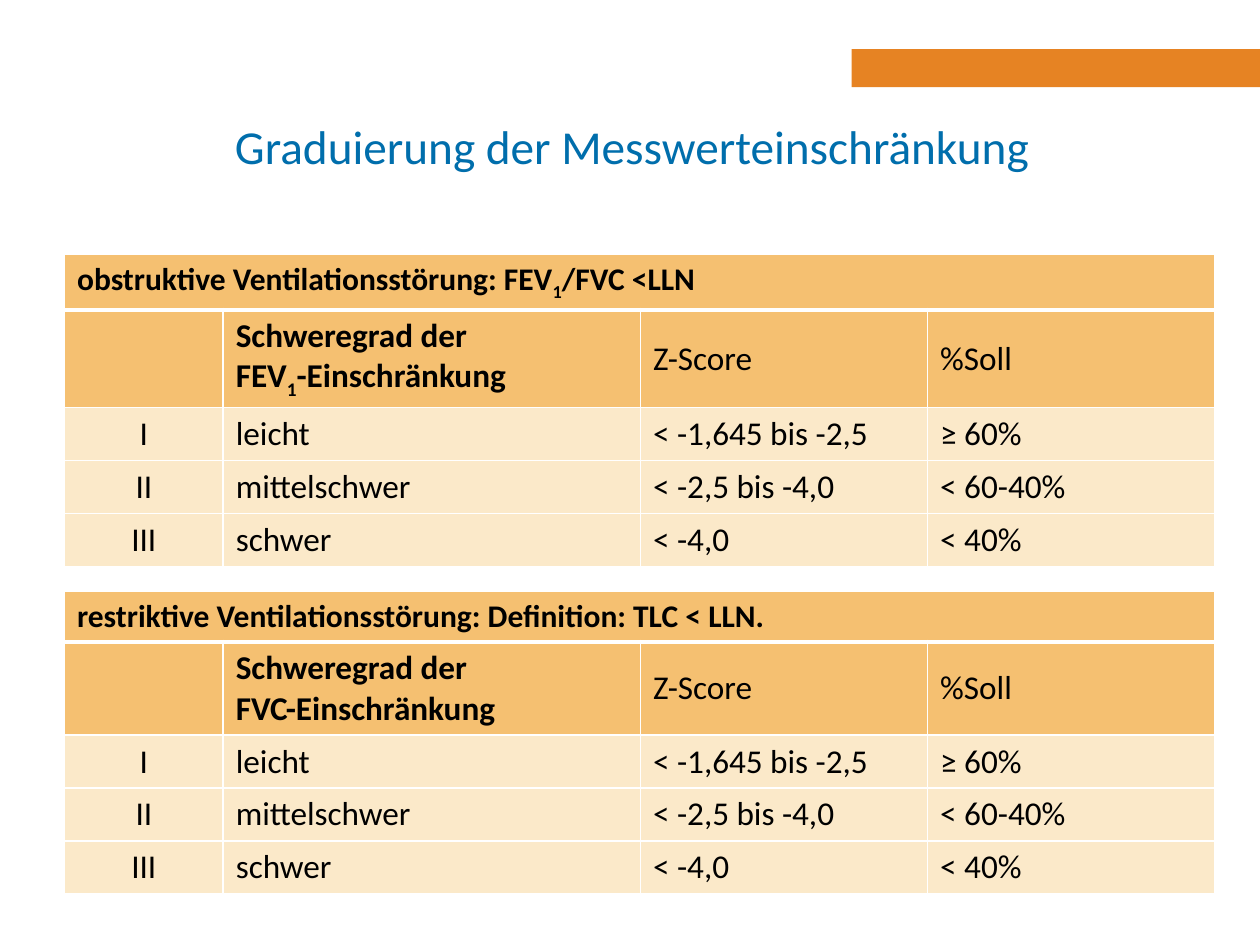
from dataclasses import dataclass

import pptx
import pptx.dml.color
import pptx.enum.shapes
import pptx.enum.text
import pptx.oxml
import pptx.oxml.ns
import pptx.util

Cm = pptx.util.Cm
Pt = pptx.util.Pt
RGB = pptx.dml.color.RGBColor
Align = pptx.enum.text.PP_ALIGN
Anchor = pptx.enum.text.MSO_ANCHOR

ORANGE = RGB(0xE6, 0x83, 0x23)
AMBER = RGB(0xF5, 0xC0, 0x71)
CREAM = RGB(0xFB, 0xE9, 0xC9)
BLUE = RGB(0x00, 0x6E, 0xAC)
BLACK = RGB(0, 0, 0)

COLS = (3.2, 8.41, 5.79, 5.79)
ROWS = (0.43, 0.43, 1.04, 0.97, 1.04)
GRADES = (
    ("I", "leicht", "< -1,645 bis -2,5", "≥ 60%"),
    ("II", "mittelschwer", "< -2,5 bis -4,0", "< 60-40%"),
    ("III", "schwer", "< -4,0", "< 40%"),
)


@dataclass
class Panel:
    top: float
    head: str  # text between underscores is subscript
    value: str


PANELS = (
    Panel(5.13, "obstruktive Ventilationsstörung: FEV_1_/FVC <LLN", "FEV_1_"),
    Panel(11.91, "restriktive Ventilationsstörung: Definition: TLC < LLN.", "FVC"),
)


def style(font, color: RGB, **values) -> None:
    for key, value in ({"name": "Calibri"} | values).items():
        setattr(font, key, value)
    font.color.rgb = color


def write(para, text: str, size: float, bold: bool) -> None:
    for index, part in enumerate(text.split("_")):
        run = para.add_run()
        run.text = part
        style(run.font, BLACK, size=Pt(size), bold=bold)
        if index % 2:
            run.font._element.set("baseline", "-25000")


def edge(cell, row: int) -> None:
    """White cell borders, with a thick line under the heading row."""
    widths = {"L": 1, "R": 1, "T": 3 if row == 1 else 1, "B": 3 if row == 0 else 1}
    props = cell._tc.get_or_add_tcPr()
    for side, width in widths.items():
        props.append(pptx.oxml.parse_xml(
            f'<a:ln{side} {pptx.oxml.ns.nsdecls("a")} w="{Pt(width)}">'
            f'<a:solidFill><a:srgbClr val="FFFFFF"/></a:solidFill></a:ln{side}>'))


def draw(slide, panel: Panel) -> None:
    label = f"Schweregrad der\n{panel.value}-Einschränkung"
    data = ((panel.head, "", "", ""), ("", label, "Z-Score", "%Soll"), *GRADES)
    table = slide.shapes.add_table(
        len(ROWS), len(COLS), Cm(1.3), Cm(panel.top),
        Cm(sum(COLS)), Cm(sum(ROWS))).table
    for col, width in zip(table.columns, COLS):
        col.width = Cm(width)
    for row, height in zip(table.rows, ROWS):
        row.height = Cm(height)
    table.cell(0, 0).merge(table.cell(0, len(COLS) - 1))

    for y, line in enumerate(data):
        for x, text in enumerate(line):
            cell = table.cell(y, x)
            edge(cell, y)
            cell.fill.solid()
            cell.fill.fore_color.rgb = AMBER if y < 2 else CREAM
            if y == 1 and x > 1:
                cell.vertical_anchor = Anchor.MIDDLE
            if not text:
                continue
            frame = cell.text_frame
            for index, part in enumerate(text.split("\n")):
                para = frame.add_paragraph() if index else frame.paragraphs[0]
                para.alignment = Align.CENTER if y > 1 and x == 0 else Align.LEFT
                write(para, part, 19 if y else 18, y == 0 or (y == 1 and x == 1))


def main() -> None:
    deck = pptx.Presentation()
    deck.slide_width, deck.slide_height = Cm(25.4), Cm(19.05)
    slide = deck.slides.add_slide(deck.slide_layouts[5])

    # Accent bar
    bar = slide.shapes.add_shape(
        pptx.enum.shapes.MSO_SHAPE.RECTANGLE, Cm(17.17), Cm(0.99), Cm(8.23), Cm(0.77))
    bar.shadow.inherit = False
    bar.fill.solid()
    bar.fill.fore_color.rgb = ORANGE
    bar.line.fill.background()

    # Title
    title = slide.shapes.title
    box = {"left": 3.76, "top": 1.75, "width": 17.96, "height": 2.36}
    for key, value in box.items():
        setattr(title, key, Cm(value))
    frame = title.text_frame
    frame.text = "Graduierung der Messwerteinschränkung"
    frame.vertical_anchor = Anchor.MIDDLE
    frame.paragraphs[0].alignment = Align.CENTER
    style(frame.paragraphs[0].runs[0].font, BLUE, size=Pt(27), bold=False)

    # Severity tables
    for panel in PANELS:
        draw(slide, panel)

    deck.save("out.pptx")


if __name__ == "__main__":
    main()
